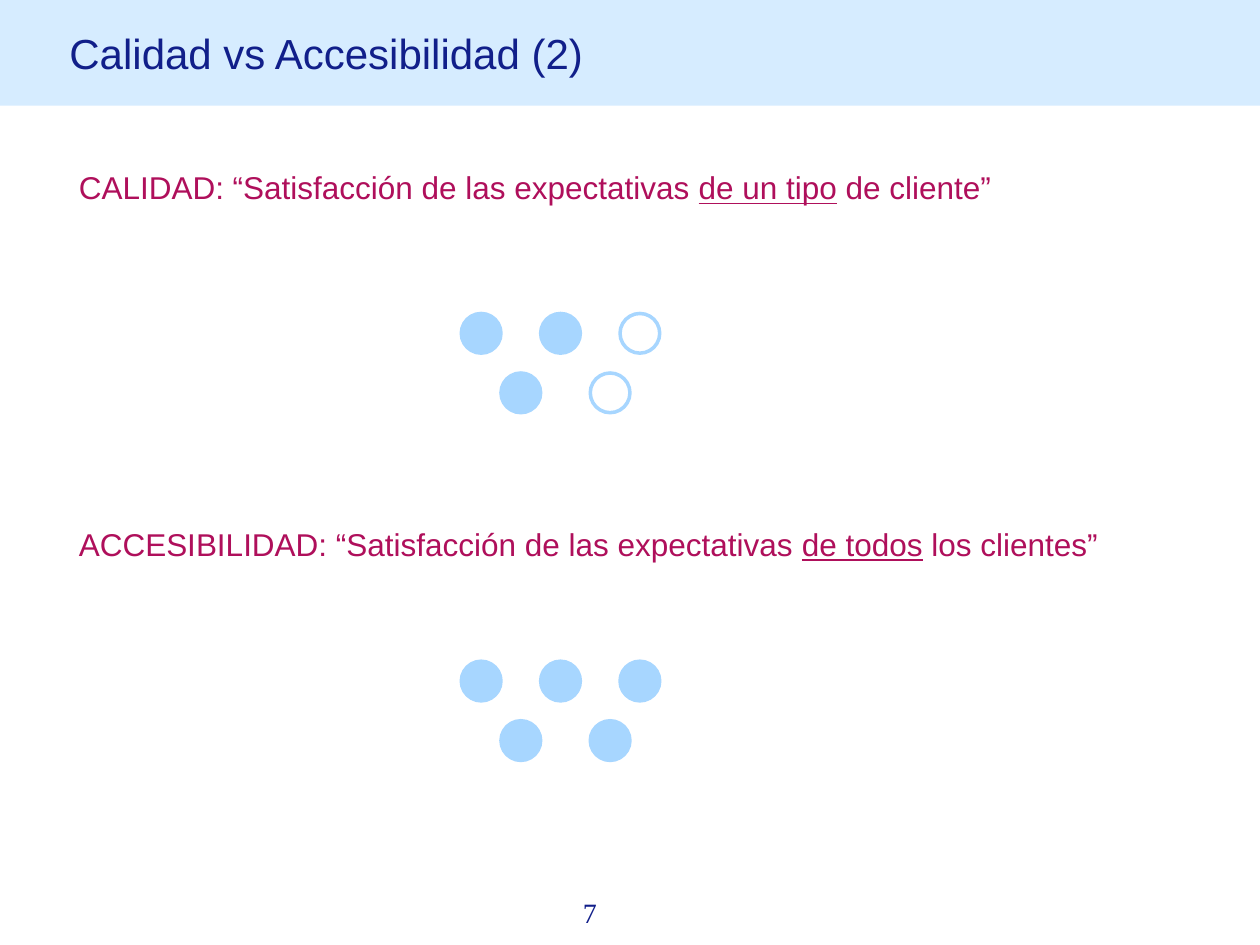
import pptx
import pptx.util
import pptx.dml.color
import pptx.enum.shapes
import pptx.enum.text

Cm, Pt = pptx.util.Cm, pptx.util.Pt
SHAPE = pptx.enum.shapes.MSO_SHAPE
ALIGN = pptx.enum.text.PP_ALIGN
ANCHOR = pptx.enum.text.MSO_ANCHOR

HUES = {"navy": "111F8A", "wine": "AF0F5B", "sky": "A7D6FF", "pale": "D6ECFF"}


def hue(name):
    return pptx.dml.color.RGBColor.from_string(HUES[name])


def apply(item, form):
    for key, value in form.items():
        setattr(item, key, value)


class Deck:
    """Holds the text style and the current slide."""

    fonts = {
        "title": ({"name": "Arial", "size": Pt(24)}, "navy"),
        "body": ({"name": "Arial", "size": Pt(18)}, "wine"),
        "page": ({"name": "Times New Roman", "size": Pt(16)}, "navy"),
    }

    def __init__(self, slide):
        self.slide = slide

    def fill_text(self, frame, runs, style, form):
        para = frame.paragraphs[0]
        apply(para, form)
        font, color = self.fonts[style]
        for text, under in runs:
            run = para.add_run()
            run.text = text
            apply(run.font, {**font, "underline": under})
            run.font.color.rgb = hue(color)

    def label(self, box, runs, style, form):
        frame = self.slide.shapes.add_textbox(*map(Cm, box)).text_frame
        frame.word_wrap = True
        self.fill_text(frame, runs, style, form)

    def shape(self, kind, box, fill, line=None):
        shape = self.slide.shapes.add_shape(kind, *map(Cm, box))
        shape.shadow.inherit = False
        if fill:
            shape.fill.solid()
            shape.fill.fore_color.rgb = hue(fill)
        else:
            shape.fill.background()
        if line:
            shape.line.color.rgb = hue(line)
            shape.line.width = Pt(2)
        else:
            shape.line.fill.background()
        return shape

    def banner(self, text):
        frame = self.shape(SHAPE.RECTANGLE, (0, 0, 25.4, 2.13), "pale").text_frame
        apply(frame, {"word_wrap": True, "vertical_anchor": ANCHOR.MIDDLE,
                      "margin_left": Cm(1.4), "margin_right": Cm(1)})
        self.fill_text(frame, [(text, False)], "title", {"alignment": ALIGN.LEFT})

    def dot(self, left, top, full):
        size = 0.8
        self.shape(SHAPE.OVAL, (left, top, size, size), "sky" if full else None, "sky")


def main():
    show = pptx.Presentation()
    apply(show, {"slide_width": Cm(25.4), "slide_height": Cm(19.05)})
    deck = Deck(show.slides.add_slide(show.slide_layouts[6]))

    # Page number
    deck.label((11.5, 17.93, 1.7, 0.94), [("7", False)], "page", {})

    # Definitions
    form = {"alignment": ALIGN.JUSTIFY, "line_spacing": 1.2}
    lines = [
        (3.12, "CALIDAD: “Satisfacción de las expectativas ", "de un tipo", " de cliente”"),
        (10.31, "ACCESIBILIDAD: “Satisfacción de las expectativas ", "de todos", " los clientes”"),
    ]
    for top, head, key, tail in lines:
        runs = [(head, False), (key, True), (tail, False)]
        deck.label((1.34, top, 23.8, 1.6), runs, "body", form)

    # Clients: filled when satisfied, three above two
    spots = [(9.3, 0), (10.9, 0), (12.5, 0), (10.1, 1.2), (11.9, 1.2)]
    groups = [(6.32, (True, True, False, True, False)), (13.33, (True,) * 5)]
    for top, states in groups:
        for (left, drop), full in zip(spots, states):
            deck.dot(left, top + drop, full)

    # Title band
    deck.banner("Calidad vs Accesibilidad (2)")

    show.save("out.pptx")


if __name__ == "__main__":
    main()
